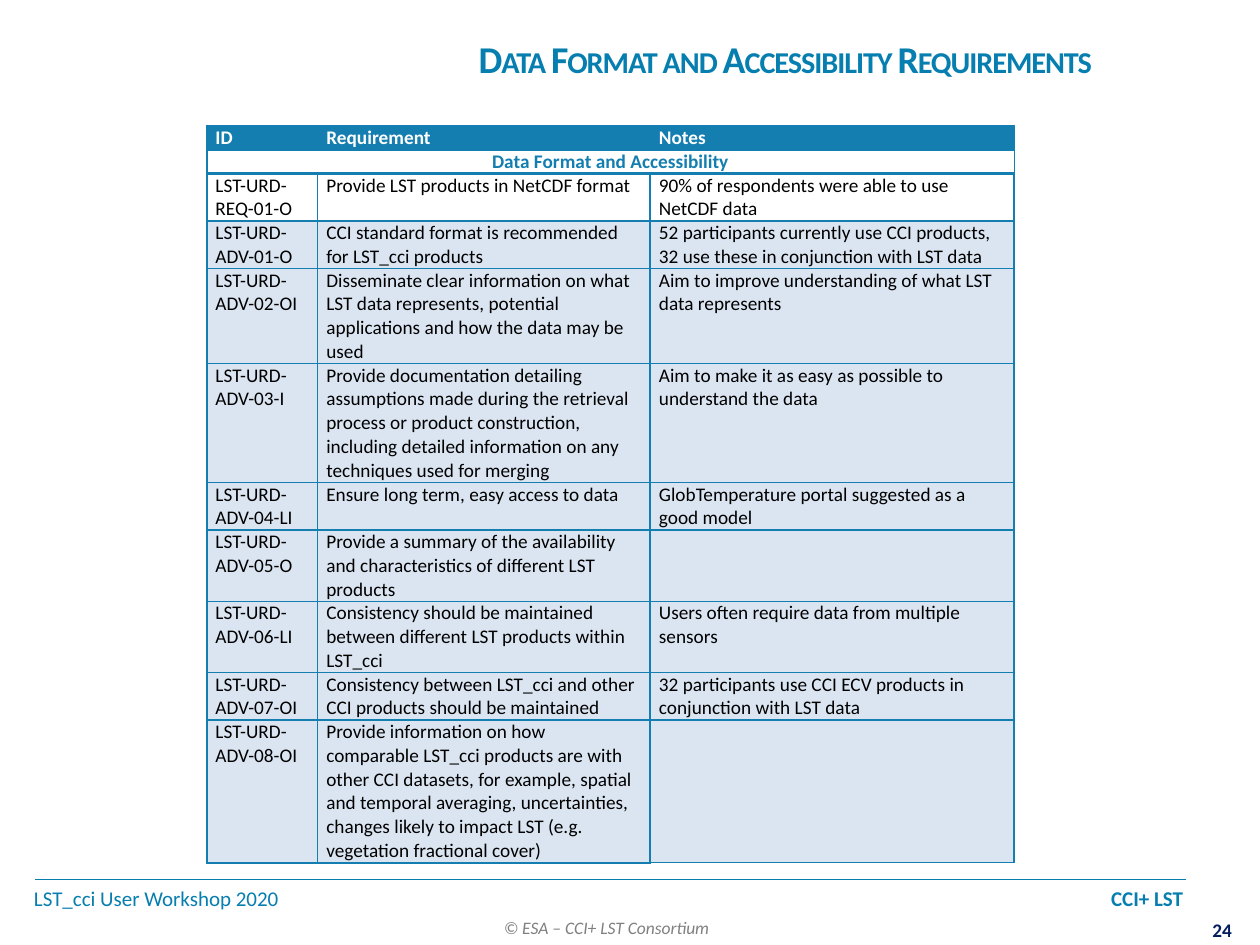
from lxml.etree import SubElement
from pptx import Presentation
from pptx.dml.color import RGBColor
from pptx.enum.shapes import MSO_CONNECTOR
from pptx.enum.text import MSO_ANCHOR as Anchor, PP_ALIGN as Align
from pptx.oxml.ns import qn
from pptx.util import Inches, Pt

BLUE = RGBColor(0x06, 0x7E, 0xB0)
TABLE_BLUE = RGBColor(0x13, 0x7E, 0xAF)
PALE = RGBColor(0xDB, 0xE5, 0xF1)
NAVY = RGBColor(0x04, 0x1E, 0x5D)
GREY = RGBColor(0x80, 0x80, 0x80)
WHITE = RGBColor(0xFF, 0xFF, 0xFF)
BLACK = RGBColor(0, 0, 0)

# Content
TITLE = "Data Format and Accessibility Requirements"
HEADINGS = ("ID", "Requirement", "Notes")
SECTION = "Data Format and Accessibility"
REQUIREMENTS = [  # text lines in the row, id, requirement, notes
    (2, "LST-URD-REQ-01-O", "Provide LST products in NetCDF format",
     "90% of respondents were able to use NetCDF data"),
    (2, "LST-URD-ADV-01-O", "CCI standard format is recommended for LST_cci products",
     "52 participants currently use CCI products, 32 use these in conjunction with LST data"),
    (4, "LST-URD-ADV-02-OI", "Disseminate clear information on what LST data represents, "
     "potential applications and how the data may be used",
     "Aim to improve understanding of what LST data represents"),
    (5, "LST-URD-ADV-03-I", "Provide documentation detailing assumptions made during the "
     "retrieval process or product construction, including detailed information on any "
     "techniques used for merging",
     "Aim to make it as easy as possible to understand the data"),
    (2, "LST-URD-ADV-04-LI", "Ensure long term, easy access to data",
     "GlobTemperature portal suggested as a good model"),
    (3, "LST-URD-ADV-05-O", "Provide a summary of the availability and characteristics of "
     "different LST products", ""),
    (3, "LST-URD-ADV-06-LI", "Consistency should be maintained between different LST "
     "products within LST_cci", "Users often require data from multiple sensors"),
    (2, "LST-URD-ADV-07-OI", "Consistency between LST_cci and other CCI products should be "
     "maintained", "32 participants use CCI ECV products in conjunction with LST data"),
    (6, "LST-URD-ADV-08-OI", "Provide information on how comparable LST_cci products are "
     "with other CCI datasets, for example, spatial and temporal averaging, uncertainties, "
     "changes likely to impact LST (e.g. vegetation fractional cover)", ""),
]
ROWS = [(1, *HEADINGS), (1, SECTION, "", ""), *REQUIREMENTS]
COLUMN_WIDTHS = (0.88, 2.64, 2.89)
TABLE_LEFT, TABLE_TOP, TABLE_HEIGHT = 1.64, 1, 5.85
THICK, THIN = 1.5, 1


def write(para, text, size=11, color=BLACK, bold=False, italic=False, align=None):
    para.alignment = align
    span = para.add_run()
    span.text = text
    font = span.font
    font.name, font.size, font.bold, font.italic = "Calibri", Pt(size), bold, italic
    font.color.rgb = color
    return span


def add_box(page, left, top, width, height, insets=(0.1, 0.05), wrap=True):
    box = page.shapes.add_textbox(*map(Inches, (left, top, width, height)))
    frame = box.text_frame
    frame.word_wrap = wrap
    frame.margin_left = frame.margin_right = Inches(insets[0])
    frame.margin_top = frame.margin_bottom = Inches(insets[1])
    return frame


def set_borders(cell, **widths):
    props = cell._tc.get_or_add_tcPr()
    for side in "LRTB":
        line = SubElement(props, qn(f"a:ln{side}"), w=str(Pt(widths[side])))
        fill = SubElement(line, qn("a:solidFill"))
        SubElement(fill, qn("a:srgbClr"), val=str(TABLE_BLUE))


def add_requirements_table(page):
    last_row, last_col = len(ROWS) - 1, len(COLUMN_WIDTHS) - 1
    total_lines = sum(row[0] for row in ROWS)
    table = page.shapes.add_table(
        len(ROWS), len(COLUMN_WIDTHS), Inches(TABLE_LEFT), Inches(TABLE_TOP),
        Inches(sum(COLUMN_WIDTHS)), Inches(TABLE_HEIGHT)).table
    table.first_row = table.horz_banding = False
    for column, width in zip(table.columns, COLUMN_WIDTHS):
        column.width = Inches(width)

    for r, (lines, *texts) in enumerate(ROWS):
        table.rows[r].height = Inches(TABLE_HEIGHT * lines / total_lines)
        for c, text in enumerate(texts):
            cell = table.cell(r, c)
            cell.margin_left = cell.margin_right = Inches(0.07)
            cell.margin_top = cell.margin_bottom = 0
            # Heavier rules frame the table and the first requirement
            set_borders(cell,
                        L=THICK if c == 0 else THIN,
                        R=THICK if c == last_col else THIN,
                        T=THICK if r in (0, 2, 3) else THIN,
                        B=THICK if r in (1, 2) or (r == last_row and c < last_col) else THIN)
            if r in (1, 2):
                cell.fill.background()
            else:
                cell.fill.solid()
                cell.fill.fore_color.rgb = TABLE_BLUE if r == 0 else PALE
            para = cell.text_frame.paragraphs[0]
            if text:
                color = {0: WHITE, 1: TABLE_BLUE}.get(r, BLACK)
                align = Align.CENTER if r == 1 else Align.JUSTIFY if r == 0 or c == 0 else None
                write(para, text, color=color, bold=r < 2, align=align)
            else:
                para.font.size = Pt(11)
    table.cell(1, 0).merge(table.cell(1, last_col))


def add_footer(page):
    # Workshop name at the left, project at a right tab
    para = add_box(page, 0.27, 6.98, 9.14, 0.3, insets=(0, 0.05)).paragraphs[0]
    tabs = SubElement(para._p.get_or_add_pPr(), qn("a:tabLst"))
    SubElement(tabs, qn("a:tab"), pos=str(Inches(9.12)), algn="r")
    write(para, "LST_cci User Workshop 2020\t", size=12, color=BLUE)
    write(para, "CCI+ LST", size=12, color=BLUE, bold=True)

    rule = page.shapes.add_connector(
        MSO_CONNECTOR.STRAIGHT, *map(Inches, (0.28, 6.98, 9.41, 6.98)))
    rule.line.color.rgb, rule.line.width = BLUE, Pt(1)
    SubElement(rule._element.spPr, qn("a:effectLst"))

    # Copyright and page number
    frame = add_box(page, 3.9, 7.23, 1.86, 0.27, wrap=False)
    write(frame.paragraphs[0], "© ESA – CCI+ LST Consortium", size=10, color=GREY, italic=True)
    frame = add_box(page, 9.57, 7.29, 0.26, 0.19, insets=(0, 0), wrap=False)
    write(frame.paragraphs[0], "24", color=NAVY, bold=True, align=Align.CENTER)


def main():
    deck = Presentation()
    deck.slide_width, deck.slide_height = Inches(10), Inches(7.5)
    page = deck.slides.add_slide(deck.slide_layouts[6])
    add_footer(page)

    # Title in tightened small capitals
    frame = add_box(page, 3.5, 0.13, 5.12, 0.67)
    frame.vertical_anchor = Anchor.MIDDLE
    span = write(frame.paragraphs[0], TITLE, size=21.6, color=BLUE, bold=True,
                 align=Align.CENTER)
    props = span._r.get_or_add_rPr()
    props.set("cap", "small")
    props.set("spc", "-60")

    add_requirements_table(page)
    deck.save("out.pptx")


if __name__ == "__main__":
    main()
